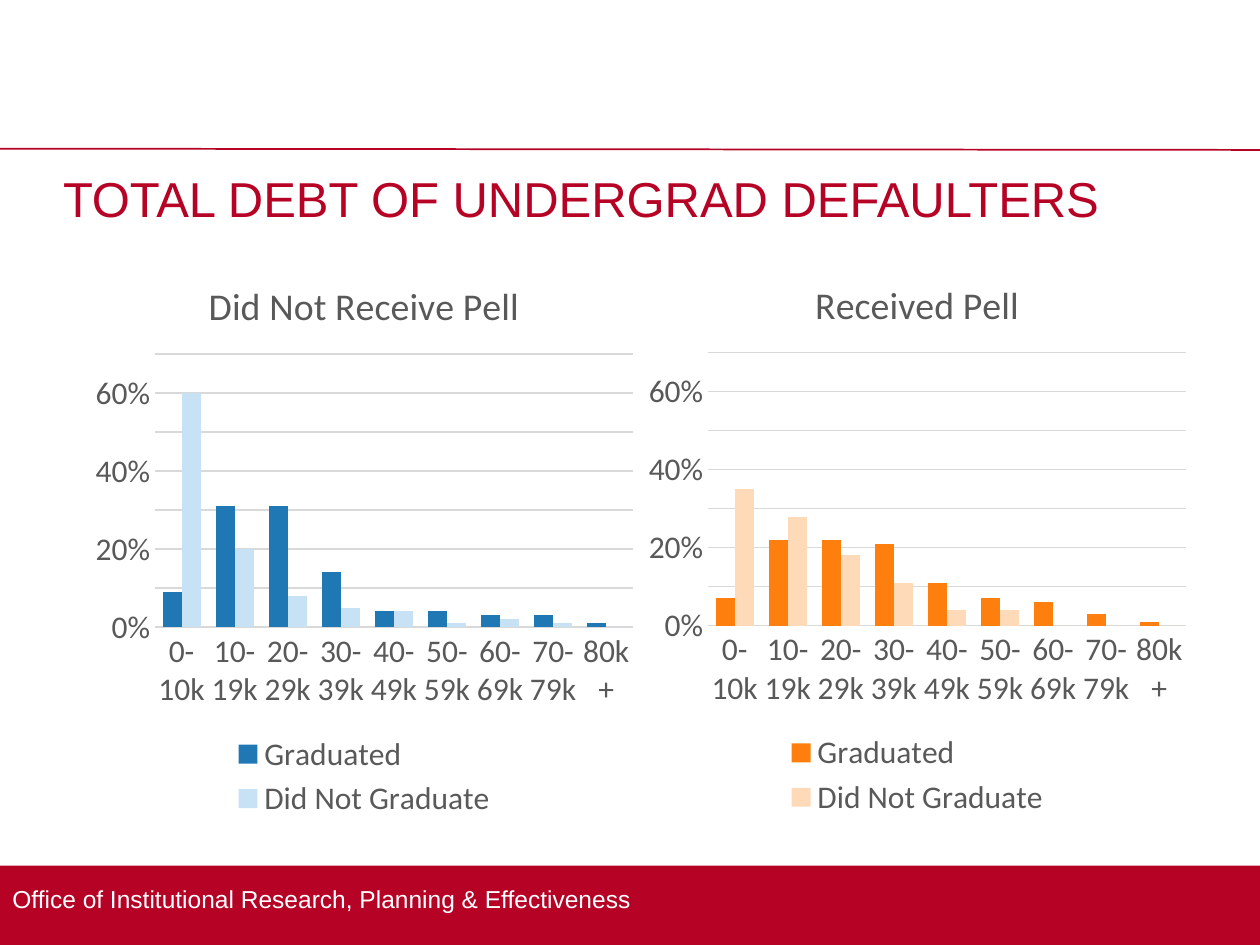
from dataclasses import dataclass

from lxml.etree import SubElement
from pptx import Presentation
from pptx.chart.data import CategoryChartData
from pptx.dml.color import RGBColor
from pptx.enum.chart import XL_CHART_TYPE as ChartType
from pptx.enum.chart import XL_LEGEND_POSITION as LegendPosition
from pptx.enum.chart import XL_TICK_MARK as TickMark
from pptx.enum.shapes import MSO_CONNECTOR as Connector
from pptx.enum.shapes import MSO_SHAPE as ShapeType
from pptx.enum.text import MSO_ANCHOR as Anchor
from pptx.enum.text import PP_ALIGN as Align
from pptx.oxml.ns import qn
from pptx.slide import Slide
from pptx.text.text import Font, TextFrame
from pptx.util import Inches, Pt

COLORS = {
    "red": "B60225",
    "white": "FFFFFF",
    "text": "595959",
    "grid": "D9D9D9",
    "blue": "1F77B4",
    "pale blue": "C7E2F5",
    "orange": "FF7F0E",
    "pale orange": "FFDAB9",
}
DEBT_BANDS = ["0-10k", *(f"{low}-{low + 9}k" for low in range(10, 80, 10)), "80k+"]


@dataclass
class DebtChart:
    """One column chart of defaulters by debt band."""

    title: str
    left: float
    top: float
    colors: tuple[str, str]
    graduated: list[float]
    not_graduated: list[float]


DEBT_CHARTS = [
    DebtChart("Did Not Receive Pell", 0.67, 2.02, ("blue", "pale blue"),
              [0.09, 0.31, 0.31, 0.14, 0.04, 0.04, 0.03, 0.03, 0.01],
              [0.6, 0.2, 0.08, 0.05, 0.04, 0.01, 0.02, 0.01, 0]),
    DebtChart("Received Pell", 5.06, 2.01, ("orange", "pale orange"),
              [0.07, 0.22, 0.22, 0.21, 0.11, 0.07, 0.06, 0.03, 0.01],
              [0.35, 0.28, 0.18, 0.11, 0.04, 0.04, 0, 0, 0]),
]


def color(name: str) -> RGBColor:
    """Look up a named colour."""
    return RGBColor.from_string(COLORS[name])


def style_font(font: Font, name: str, size: float, color_name: str) -> None:
    """Set typeface, size and colour, without bold."""
    font.name = name
    font.size = Pt(size)
    font.bold = False
    font.color.rgb = color(color_name)


def write_line(frame: TextFrame, text: str, size: float, color_name: str) -> None:
    """Write one left-aligned Arial line in a text frame."""
    frame.word_wrap = True
    paragraph = frame.paragraphs[0]
    paragraph.alignment = Align.LEFT
    run = paragraph.add_run()
    run.text = text
    style_font(run.font, "Arial", size, color_name)


def add_frame(slide: Slide) -> None:
    """Draw the top rule and the footer band with its text."""
    band = slide.shapes.add_shape(
        ShapeType.RECTANGLE, Inches(0), Inches(6.87), Inches(10), Inches(0.63))
    band.shadow.inherit = False
    band.fill.solid()
    band.fill.fore_color.rgb = color("red")
    band.line.fill.background()

    rule = slide.shapes.add_connector(
        Connector.STRAIGHT, Inches(0), Inches(1.18), Inches(10), Inches(1.19))
    rule.line.color.rgb = color("red")
    rule.line.width = Pt(1)
    SubElement(rule._element.spPr, qn("a:effectLst"))

    footer = slide.shapes.add_textbox(Inches(0), Inches(6.88), Inches(10), Inches(0.51))
    footer.text_frame.vertical_anchor = Anchor.MIDDLE
    write_line(footer.text_frame,
               "Office of Institutional Research, Planning & Effectiveness", 14, "white")


def add_title(slide: Slide) -> None:
    """Place and fill the title placeholder."""
    title = slide.shapes.title
    title.left, title.top = Inches(0.5), Inches(1.29)
    title.width, title.height = Inches(9), Inches(0.87)
    frame = title.text_frame
    frame.margin_left = frame.margin_right = 0
    frame.vertical_anchor = Anchor.TOP
    write_line(frame, "TOTAL DEBT OF UNDERGRAD DEFAULTERS", 28, "red")


def add_debt_chart(slide: Slide, debt: DebtChart) -> None:
    """Draw one clustered column chart."""
    data = CategoryChartData(number_format="0%")
    data.categories = DEBT_BANDS
    data.add_series("Graduated", debt.graduated)
    data.add_series("Did Not Graduate", debt.not_graduated)
    chart = slide.shapes.add_chart(
        ChartType.COLUMN_CLUSTERED, Inches(debt.left), Inches(debt.top),
        Inches(4.44), Inches(4.52), data).chart
    style_font(chart.font, "Calibri", 18, "text")

    chart.has_title = True
    run = chart.chart_title.text_frame.paragraphs[0].add_run()
    run.text = debt.title
    style_font(run.font, "Calibri", 21.6, "text")
    chart.chart_title.include_in_layout = False

    chart.has_legend = True
    chart.legend.position = LegendPosition.BOTTOM
    chart.legend.include_in_layout = False
    style_font(chart.legend.font, "Calibri", 18, "text")

    for axis in (chart.category_axis, chart.value_axis):
        axis.major_tick_mark = axis.minor_tick_mark = TickMark.NONE
        style_font(axis.tick_labels.font, "Calibri", 18, "text")
    values = chart.value_axis
    values.minimum_scale, values.maximum_scale, values.major_unit = 0, 0.7, 0.1
    values.tick_labels.number_format = "0%"
    values.tick_labels.number_format_is_linked = False
    values.format.line.fill.background()
    for line in (chart.category_axis.format.line, values.major_gridlines.format.line):
        line.color.rgb = color("grid")
        line.width = Pt(0.75)

    plot = chart.plots[0]
    plot.gap_width = 80
    plot.overlap = 0
    plot.vary_by_categories = False
    for series, name in zip(plot.series, debt.colors):
        series.format.fill.solid()
        series.format.fill.fore_color.rgb = color(name)


def main() -> None:
    """Build and save the slide."""
    presentation = Presentation()
    presentation.slide_width = Inches(10)
    presentation.slide_height = Inches(7.5)
    slide = presentation.slides.add_slide(presentation.slide_layouts[5])
    add_frame(slide)
    add_title(slide)
    for debt in DEBT_CHARTS:
        add_debt_chart(slide, debt)
    presentation.save("out.pptx")


if __name__ == "__main__":
    main()
